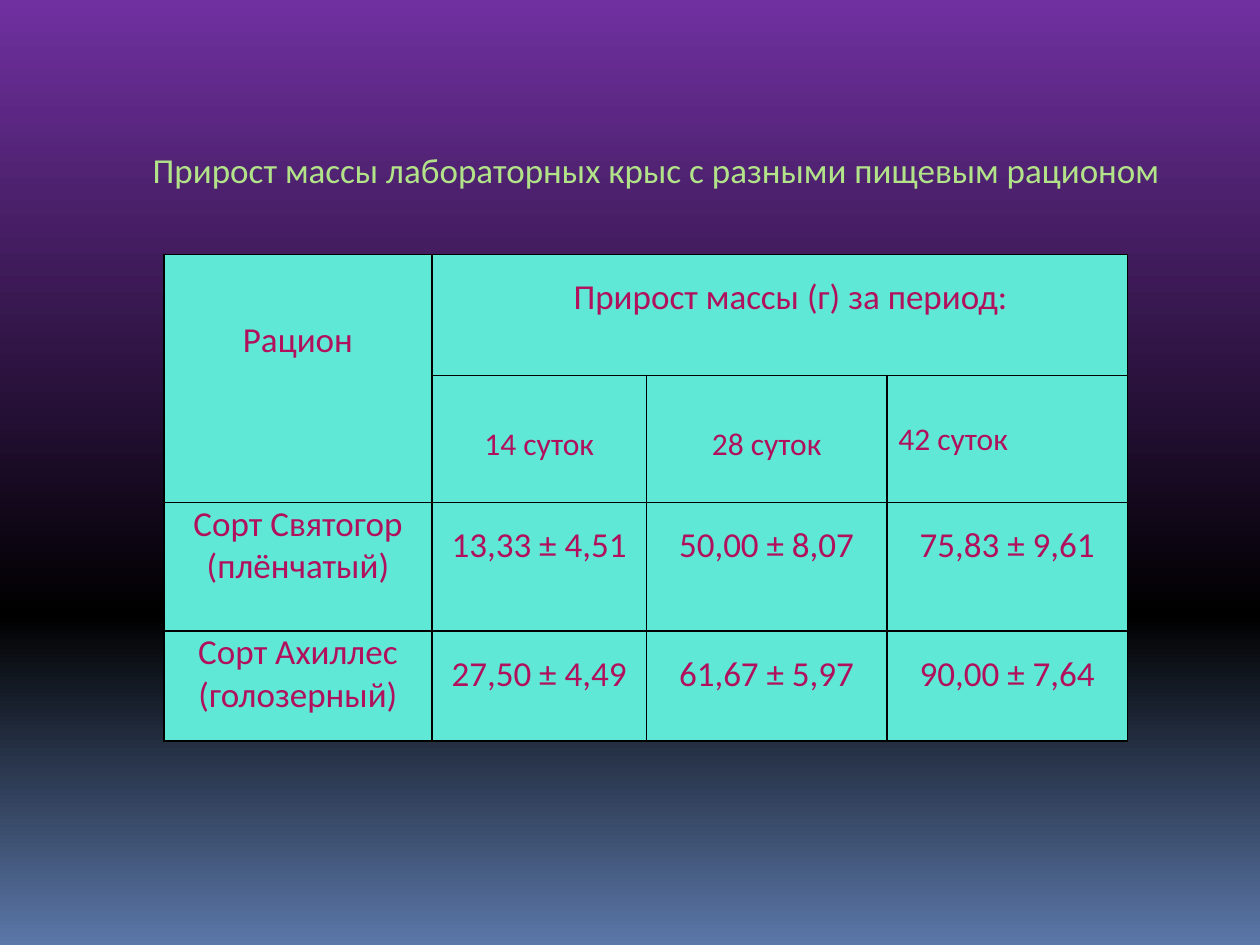
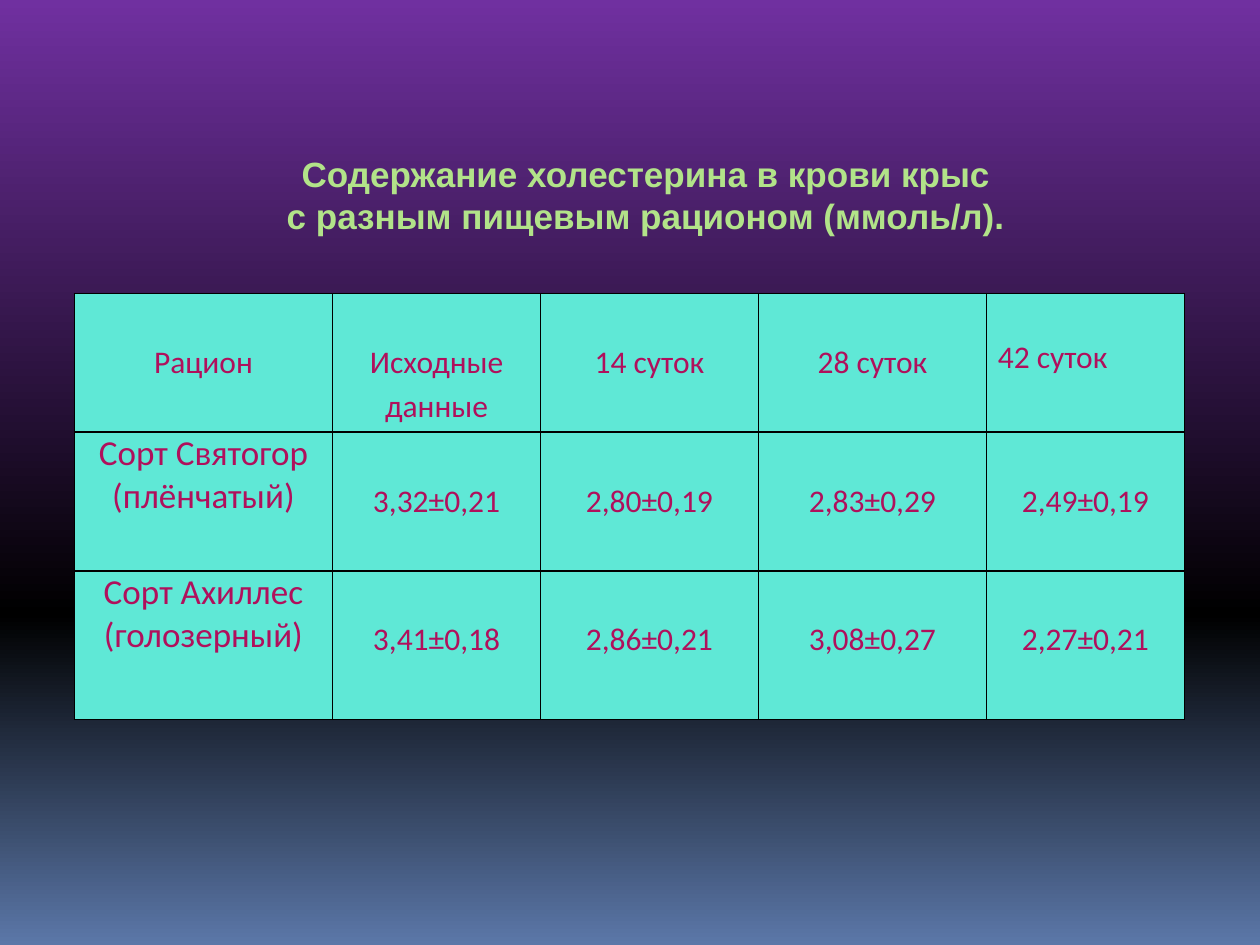
import copy
import dataclasses

import pptx
import pptx.dml.color
import pptx.enum.text
import pptx.oxml
import pptx.oxml.ns
import pptx.util
from pptx.util import Inches

ALIGN = pptx.enum.text.PP_ALIGN
CELL_FILL = "5FE8D6"
CELL_TEXT = "B0105C"
TITLE_TEXT = "B2E389"
BORDER = "000000"
BACKGROUND_STOPS = [(0, "7030A0"), (0.65, "000000"), (1, "5B77A8")]
SIDE_MARGIN = 0.07
VARIETIES = ["Сорт Святогор\n(плёнчатый)", "Сорт Ахиллес\n(голозерный)"]


@dataclasses.dataclass
class CellStyle:
    """Text settings of one type of table cell."""
    size: int
    spacing: float
    top: float = 0
    left: float = SIDE_MARGIN
    align: ALIGN = ALIGN.CENTER


VARIETY = CellStyle(20, 1.0)
GAIN = CellStyle(20, 1.5)
GAIN_HEADING = CellStyle(20, 1.5, left=0.24)
RATION_HEADING = CellStyle(20, 1.5, top=0.34)
LOWERED = CellStyle(18, 1.15, top=0.35)
LAST_PERIOD = CellStyle(18, 1.15, top=0.31, left=0.09, align=ALIGN.LEFT)
PERIODS = [("14 суток", LOWERED), ("28 суток", LOWERED), ("42 суток", LAST_PERIOD)]


def color(value):
    """Turn a hex string into a colour."""
    return pptx.dml.color.RGBColor.from_string(value)


def set_background(master):
    """Give every slide the vertical three-colour gradient."""
    fill = master.background.fill
    fill.gradient()
    fill.gradient_angle = 270
    stop_list = next(master.element.iter(pptx.oxml.ns.qn("a:gsLst")))
    stop_list.append(copy.deepcopy(stop_list[-1]))
    for stop, (position, value) in zip(fill.gradient_stops, BACKGROUND_STOPS):
        stop.position = position
        stop.color.rgb = color(value)


def add_title(slide, box, lines, font_name, bold=False):
    """Add the centred title lines with a first-line indent."""
    frame = slide.shapes.add_textbox(*map(Inches, box)).text_frame
    frame.word_wrap = True
    frame.text = "\n".join(lines)
    for paragraph in frame.paragraphs:
        paragraph.alignment = ALIGN.CENTER
        paragraph._p.get_or_add_pPr().set("indent", str(Inches(0.49)))
        paragraph.font.name = font_name
        paragraph.font.size = pptx.util.Pt(20)
        paragraph.font.bold = bold
        paragraph.font.color.rgb = color(TITLE_TEXT)


def paint_cell(cell):
    """Fill a cell and draw its four borders."""
    cell.fill.solid()
    cell.fill.fore_color.rgb = color(CELL_FILL)
    properties = cell._tc.get_or_add_tcPr()
    for index, side in enumerate("LRTB"):
        properties.insert(index, pptx.oxml.parse_xml(
            f'<a:ln{side} {pptx.oxml.ns.nsdecls("a")} w="{pptx.util.Pt(1)}">'
            f'<a:solidFill><a:srgbClr val="{BORDER}"/></a:solidFill></a:ln{side}>'))


def write_cell(cell, text, style):
    """Write text into a cell in the given style."""
    cell.margin_left = Inches(style.left)
    cell.margin_right = Inches(SIDE_MARGIN)
    cell.margin_top = Inches(style.top)
    cell.margin_bottom = 0
    cell.text = text
    for paragraph in cell.text_frame.paragraphs:
        paragraph.alignment = style.align
        paragraph.line_spacing = style.spacing
        paragraph.font.name = "Calibri"
        paragraph.font.size = pptx.util.Pt(style.size)
        paragraph.font.color.rgb = color(CELL_TEXT)


def add_data_table(slide, left, top, widths, heights, rows):
    """Add a bordered table; an empty entry leaves a cell for merging."""
    table = slide.shapes.add_table(
        len(heights), len(widths), Inches(left), Inches(top),
        Inches(sum(widths)), Inches(sum(heights))).table
    table.first_row = table.horz_banding = False
    for column, width in zip(table.columns, widths):
        column.width = Inches(width)
    for row, height in zip(table.rows, heights):
        row.height = Inches(height)
    for row, entries in zip(table.rows, rows):
        for cell, entry in zip(row.cells, entries):
            paint_cell(cell)
            if entry:
                write_cell(cell, *entry)
    return table


def variety_rows(values, style):
    """Build one row per variety from its measured values."""
    return [[(variety, VARIETY)] + [(value, style) for value in measured]
            for variety, measured in zip(VARIETIES, values)]


def add_weight_slide(slide):
    """Show the weight gain of the rats by ration."""
    rows = [
        [("Рацион", RATION_HEADING),
         ("Прирост массы (г) за период:", GAIN_HEADING), None, None],
        [None] + PERIODS,
    ] + variety_rows([
        ["13,33 ± 4,51", "50,00 ± 8,07", "75,83 ± 9,61"],
        ["27,50 ± 4,49", "61,67 ± 5,97", "90,00 ± 7,64"],
    ], GAIN)
    table = add_data_table(slide, 1.3, 2.02, [2.13, 1.7, 1.91, 1.91],
                           [0.96, 1.01, 1.02, 0.87], rows)
    table.cell(0, 0).merge(table.cell(1, 0))
    table.cell(0, 1).merge(table.cell(0, 3))
    add_title(slide, (0.33, 1.13, 9.27, 0.44),
              ["Прирост массы лабораторных крыс с разными пищевым рационом"],
              "Calibri")


def add_cholesterol_slide(slide):
    """Show the blood cholesterol of the rats by ration."""
    rows = [
        [("Рацион", LOWERED), ("Исходные данные", LOWERED)] + PERIODS,
    ] + variety_rows([
        ["3,32±0,21", "2,80±0,19", "2,83±0,29", "2,49±0,19"],
        ["3,41±0,18", "2,86±0,21", "3,08±0,27", "2,27±0,21"],
    ], LOWERED)
    add_data_table(slide, 0.59, 2.33, [2.05, 1.65, 1.73, 1.81, 1.57],
                   [1.1, 1.1, 1.18], rows)
    add_title(slide, (1.14, 1.16, 7.48, 0.78),
              ["Содержание холестерина в крови крыс",
               "с разным пищевым рационом (ммоль/л)."], "Arial", bold=True)


def main():
    """Build and save the presentation."""
    presentation = pptx.Presentation()
    presentation.slide_width = Inches(10)
    presentation.slide_height = Inches(7.5)
    set_background(presentation.slide_master)
    for add_content in (add_weight_slide, add_cholesterol_slide):
        add_content(presentation.slides.add_slide(presentation.slide_layouts[6]))
    presentation.save("out.pptx")


if __name__ == "__main__":
    main()
